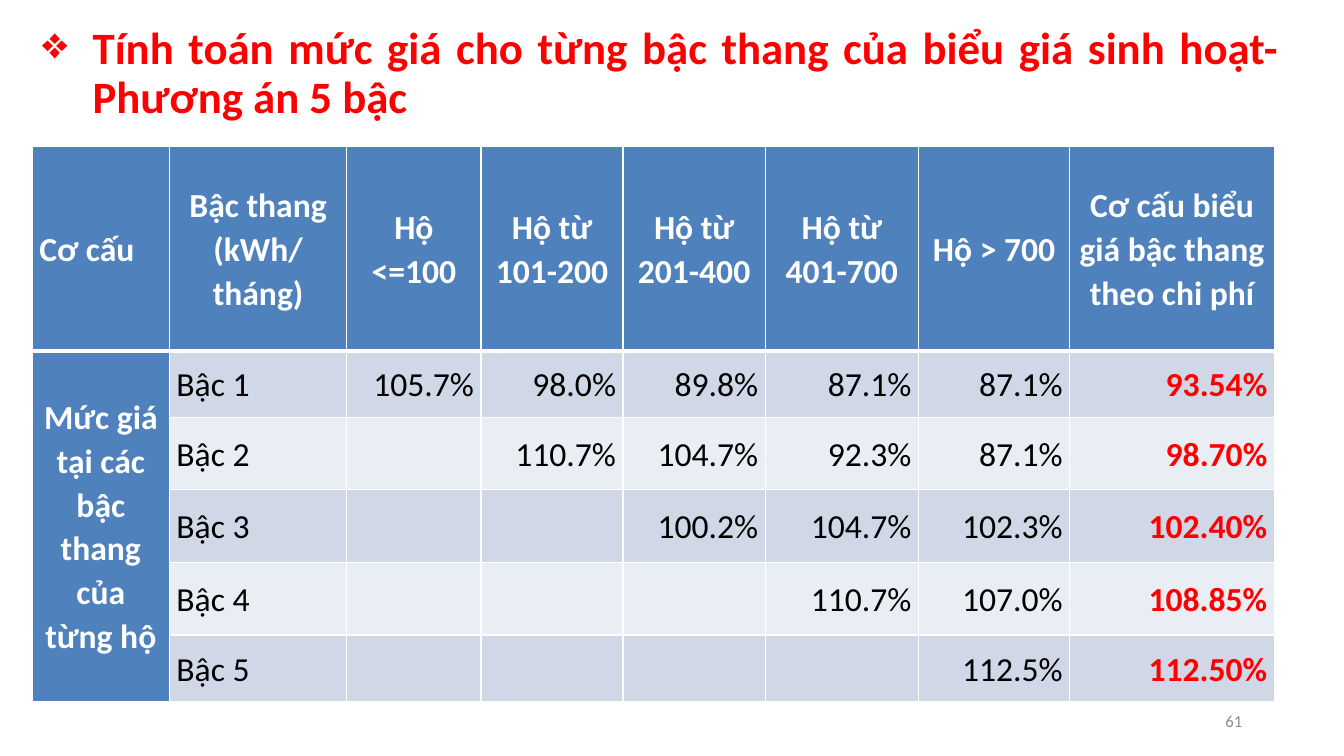
from dataclasses import dataclass

import lxml.etree
import pptx
import pptx.dml.color
import pptx.enum.text
import pptx.oxml.ns
import pptx.util

Inches = pptx.util.Inches
Align = pptx.enum.text.PP_ALIGN
Middle = pptx.enum.text.MSO_ANCHOR.MIDDLE
qn = pptx.oxml.ns.qn

WHITE, BLACK, RED, GREY = "FFFFFF", "000000", "FF0000", "8C8C8C"
HEADER_BLUE = "4F81BD"
BANDS = ("D0D8E8", "E9EDF4")


@dataclass
class TextStyle:
    size: float
    color: str
    bold: bool = False
    align: Align = Align.LEFT
    spacing: float = 1.0


HEADING = TextStyle(32, RED, True, Align.JUSTIFY, 0.9)
PAGE_NUMBER = TextStyle(12, GREY, align=Align.RIGHT)
HEADER_LEFT = TextStyle(24, WHITE, True, Align.LEFT, 1.07)
HEADER = TextStyle(24, WHITE, True, Align.CENTER, 1.07)
STEP = TextStyle(24, BLACK, False, Align.LEFT, 1.07)
VALUE = TextStyle(24, BLACK, False, Align.RIGHT, 1.07)
RESULT = TextStyle(24, RED, True, Align.RIGHT, 1.07)

COLUMN_WIDTHS = (1.36, 1.76, 1.33, 1.41, 1.41, 1.52, 1.5, 2.03)
ROW_HEIGHTS = (2.03, 0.66, 0.72, 0.72, 0.72, 0.66)
COLUMN_TITLES = (
    "Cơ cấu", "Bậc thang (kWh/ tháng)", "Hộ <=100", "Hộ từ 101-200",
    "Hộ từ 201-400", "Hộ từ 401-700", "Hộ > 700",
    "Cơ cấu biểu giá bậc thang theo chi phí",
)
GROUP_TITLE = "Mức giá tại các bậc thang của từng hộ"
# Each step applies only to the larger households, so rows fill from the right
PRICES = (
    ("105.7%", "98.0%", "89.8%", "87.1%", "87.1%", "93.54%"),
    ("110.7%", "104.7%", "92.3%", "87.1%", "98.70%"),
    ("100.2%", "104.7%", "102.3%", "102.40%"),
    ("110.7%", "107.0%", "108.85%"),
    ("112.5%", "112.50%"),
)


def rgb(color: str) -> pptx.dml.color.RGBColor:
    return pptx.dml.color.RGBColor.from_string(color)


def write(frame, text: str, style: TextStyle):
    """Put one styled run into the frame and return its paragraph."""
    para = frame.paragraphs[0]
    para.alignment = style.align
    para.line_spacing = style.spacing
    span = para.add_run()
    span.text = text
    span.font.name = "Calibri"
    span.font.size = pptx.util.Pt(style.size)
    span.font.bold = style.bold
    span.font.color.rgb = rgb(style.color)
    return para


def add_text(page, left: float, top: float, width: float, height: float,
             text: str, style: TextStyle):
    box = page.shapes.add_textbox(
        Inches(left), Inches(top), Inches(width), Inches(height))
    box.text_frame.word_wrap = True
    box.text_frame.vertical_anchor = Middle
    return write(box.text_frame, text, style)


def add_bullet(para, symbol: str, indent: float) -> None:
    properties = para._p.get_or_add_pPr()
    properties.set("marL", str(Inches(indent)))
    properties.set("indent", str(-Inches(indent)))
    lxml.etree.SubElement(properties, qn("a:buChar")).set("char", symbol)


def set_borders(cell, **widths: float) -> None:
    """Draw white cell borders, widths in points by side."""
    properties = cell._tc.get_or_add_tcPr()
    for position, side in enumerate("LRTB"):
        line = lxml.etree.Element(qn("a:ln" + side))
        line.set("w", str(pptx.util.Pt(widths.get(side, 1))))
        fill = lxml.etree.SubElement(line, qn("a:solidFill"))
        lxml.etree.SubElement(fill, qn("a:srgbClr")).set("val", WHITE)
        properties.insert(position, line)


def format_cell(cell, fill: str, **borders: float) -> None:
    cell.fill.solid()
    cell.fill.fore_color.rgb = rgb(fill)
    cell.vertical_anchor = Middle
    cell.margin_left = cell.margin_right = Inches(0.07)
    cell.margin_top = cell.margin_bottom = 0
    set_borders(cell, **borders)


def add_price_table(page) -> None:
    table = page.shapes.add_table(
        len(ROW_HEIGHTS), len(COLUMN_WIDTHS), Inches(0.32), Inches(1.45),
        Inches(sum(COLUMN_WIDTHS)), Inches(sum(ROW_HEIGHTS))).table
    for column, width in zip(table.columns, COLUMN_WIDTHS):
        column.width = Inches(width)
    for row, height in zip(table.rows, ROW_HEIGHTS):
        row.height = Inches(height)

    # Header row
    for index, title in enumerate(COLUMN_TITLES):
        cell = table.cell(0, index)
        format_cell(cell, HEADER_BLUE, B=3)
        write(cell.text_frame, title, HEADER if index else HEADER_LEFT)

    # Price rows
    last = len(COLUMN_WIDTHS) - 1
    for number, prices in enumerate(PRICES, start=1):
        top = 3 if number == 1 else 1
        for index in range(last + 1):
            fill = BANDS[(number - 1) % 2] if index else HEADER_BLUE
            format_cell(table.cell(number, index), fill, T=top)
        write(table.cell(number, 1).text_frame, f"Bậc {number}", STEP)
        for index, price in enumerate(prices, start=last + 1 - len(prices)):
            write(table.cell(number, index).text_frame, price,
                  RESULT if index == last else VALUE)

    # Row group label
    group = table.cell(1, 0)
    group.merge(table.cell(len(PRICES), 0))
    write(group.text_frame, GROUP_TITLE, HEADER)


def main() -> None:
    deck = pptx.Presentation()
    deck.slide_width, deck.slide_height = Inches(13.33), Inches(7.5)
    page = deck.slides.add_slide(deck.slide_layouts[6])

    heading = add_text(
        page, 0.32, 0.24, 12.47, 1,
        "Tính toán mức giá cho từng bậc thang của biểu giá sinh hoạt- "
        "Phương án 5 bậc", HEADING)
    add_bullet(heading, "❖", 0.5)
    add_price_table(page)
    add_text(page, 9.42, 6.95, 3, 0.4, "61", PAGE_NUMBER)

    deck.save("out.pptx")


if __name__ == "__main__":
    main()
